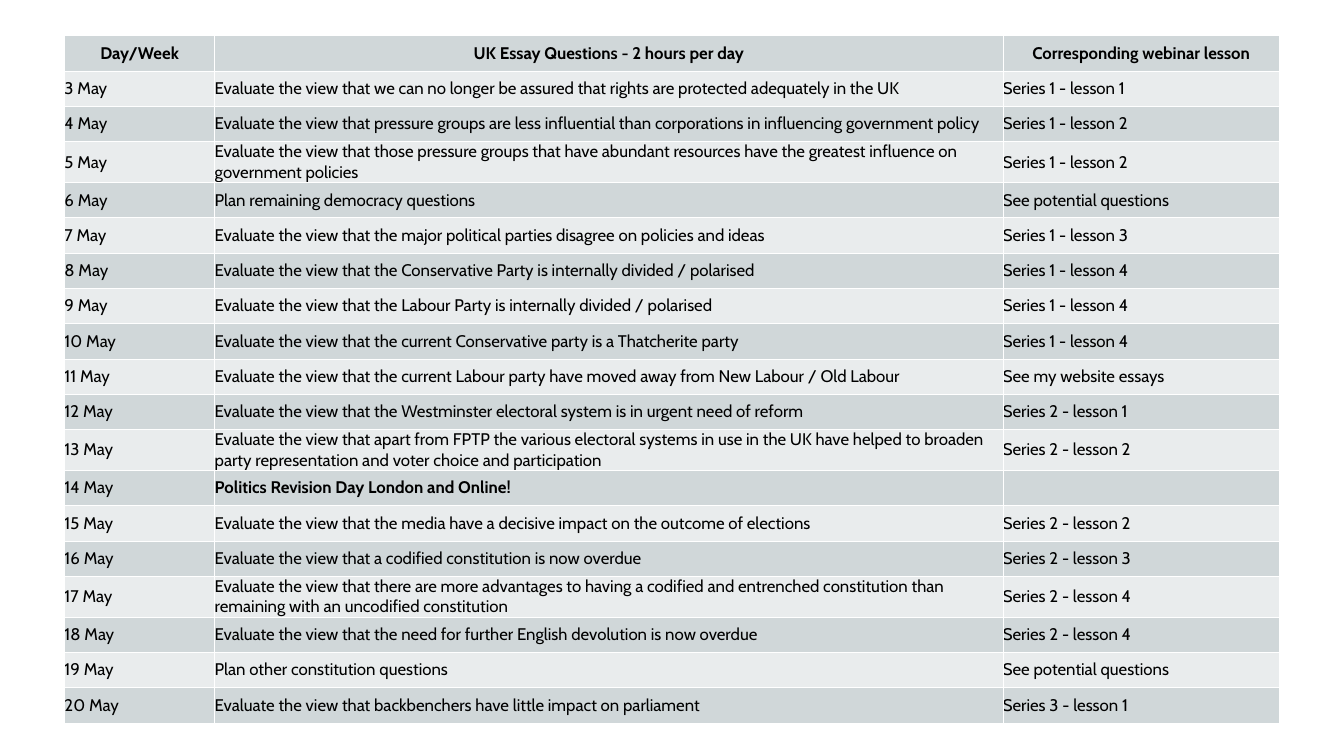
from lxml import etree
from pptx import Presentation
from pptx.dml.color import RGBColor
from pptx.enum.text import MSO_ANCHOR, PP_ALIGN
from pptx.oxml.ns import qn
from pptx.util import Inches, Pt

LEFT, CENTER = PP_ALIGN.LEFT, PP_ALIGN.CENTER
MIDDLE = MSO_ANCHOR.MIDDLE
BLANK = 6

COLORS = {"dark": "D0D7D9", "light": "E9ECED", "text": "000000", "rule": "FFFFFF"}
FONT = "Cabin"
WIDTHS = (2.98, 15.64, 5.49)
ROW_HEIGHT = 0.7
FIRST_DAY = 3

HEADS = ("Day/Week", "UK Essay Questions - 2 hours per day", "Corresponding webinar lesson")
VIEW = "Evaluate the view that "
REVISION = "Politics Revision Day London and Online!"
PLAN = (
    (VIEW + "we can no longer be assured that rights are protected adequately in the UK",
     "Series 1 - lesson 1"),
    (VIEW + "pressure groups are less influential than corporations in influencing "
     "government policy", "Series 1 - lesson 2"),
    (VIEW + "those pressure groups that have abundant resources have the greatest "
     "influence on government policies", "Series 1 - lesson 2"),
    ("Plan remaining democracy questions", "See potential questions"),
    (VIEW + "the major political parties disagree on policies and ideas",
     "Series 1 - lesson 3"),
    (VIEW + "the Conservative Party is internally divided / polarised",
     "Series 1 - lesson 4"),
    (VIEW + "the Labour Party is internally divided / polarised", "Series 1 - lesson 4"),
    (VIEW + "the current Conservative party is a Thatcherite party", "Series 1 - lesson 4"),
    (VIEW + "the current Labour party have moved away from New Labour / Old Labour",
     "See my website essays"),
    (VIEW + "the Westminster electoral system is in urgent need of reform",
     "Series 2 - lesson 1"),
    (VIEW + "apart from FPTP the various electoral systems in use in the UK have helped "
     "to broaden party representation and voter choice and participation",
     "Series 2 - lesson 2"),
    (REVISION, ""),
    (VIEW + "the media have a decisive impact on the outcome of elections",
     "Series 2 - lesson 2"),
    (VIEW + "a codified constitution is now overdue", "Series 2 - lesson 3"),
    (VIEW + "there are more advantages to having a codified and entrenched constitution "
     "than remaining with an uncodified constitution", "Series 2 - lesson 4"),
    (VIEW + "the need for further English devolution is now overdue", "Series 2 - lesson 4"),
    ("Plan other constitution questions", "See potential questions"),
    (VIEW + "backbenchers have little impact on parliament", "Series 3 - lesson 1"),
)


def write(cell, text, size=24, bold=False, align=LEFT, color="text"):
    cell.vertical_anchor = MIDDLE
    cell.margin_left = cell.margin_right = cell.margin_top = cell.margin_bottom = 0
    if not text:
        return
    para = cell.text_frame.paragraphs[0]
    para.alignment = align
    run = para.add_run()
    run.text = text
    font = run.font
    font.name, font.size, font.bold = FONT, Pt(size), bold
    font.color.rgb = RGBColor.from_string(COLORS[color])


def set_border(cell, color="rule", width=1):
    props = cell._tc.get_or_add_tcPr()
    for side in ("a:lnL", "a:lnR", "a:lnT", "a:lnB"):
        line = etree.SubElement(props, qn(side), w=str(Pt(width)))
        fill = etree.SubElement(line, qn("a:solidFill"))
        etree.SubElement(fill, qn("a:srgbClr"), val=COLORS[color])


def set_fill(cell, color):
    cell.fill.solid()
    cell.fill.fore_color.rgb = RGBColor.from_string(COLORS[color])


def add_plan(slide, rows):
    """Add the revision timetable, with its head row first."""
    frame = slide.shapes.add_table(
        len(rows), len(WIDTHS), Inches(1.28), Inches(0.71),
        Inches(sum(WIDTHS)), Inches(ROW_HEIGHT * len(rows)))
    table = frame.table
    for column, width in zip(table.columns, WIDTHS):
        column.width = Inches(width)
    for i, texts in enumerate(rows):
        table.rows[i].height = Inches(ROW_HEIGHT)
        head = i == 0
        for cell, text in zip(table.rows[i].cells, texts):
            write(cell, text, bold=head or text == REVISION,
                  align=CENTER if head else LEFT)
            set_border(cell)
            set_fill(cell, "light" if i % 2 else "dark")


def main():
    deck = Presentation()
    deck.slide_width, deck.slide_height = Inches(26.67), Inches(15)
    slide = deck.slides.add_slide(deck.slide_layouts[BLANK])
    days = [(f"{day} May", *entry) for day, entry in enumerate(PLAN, FIRST_DAY)]
    add_plan(slide, [HEADS, *days])
    deck.save("out.pptx")


if __name__ == "__main__":
    main()
